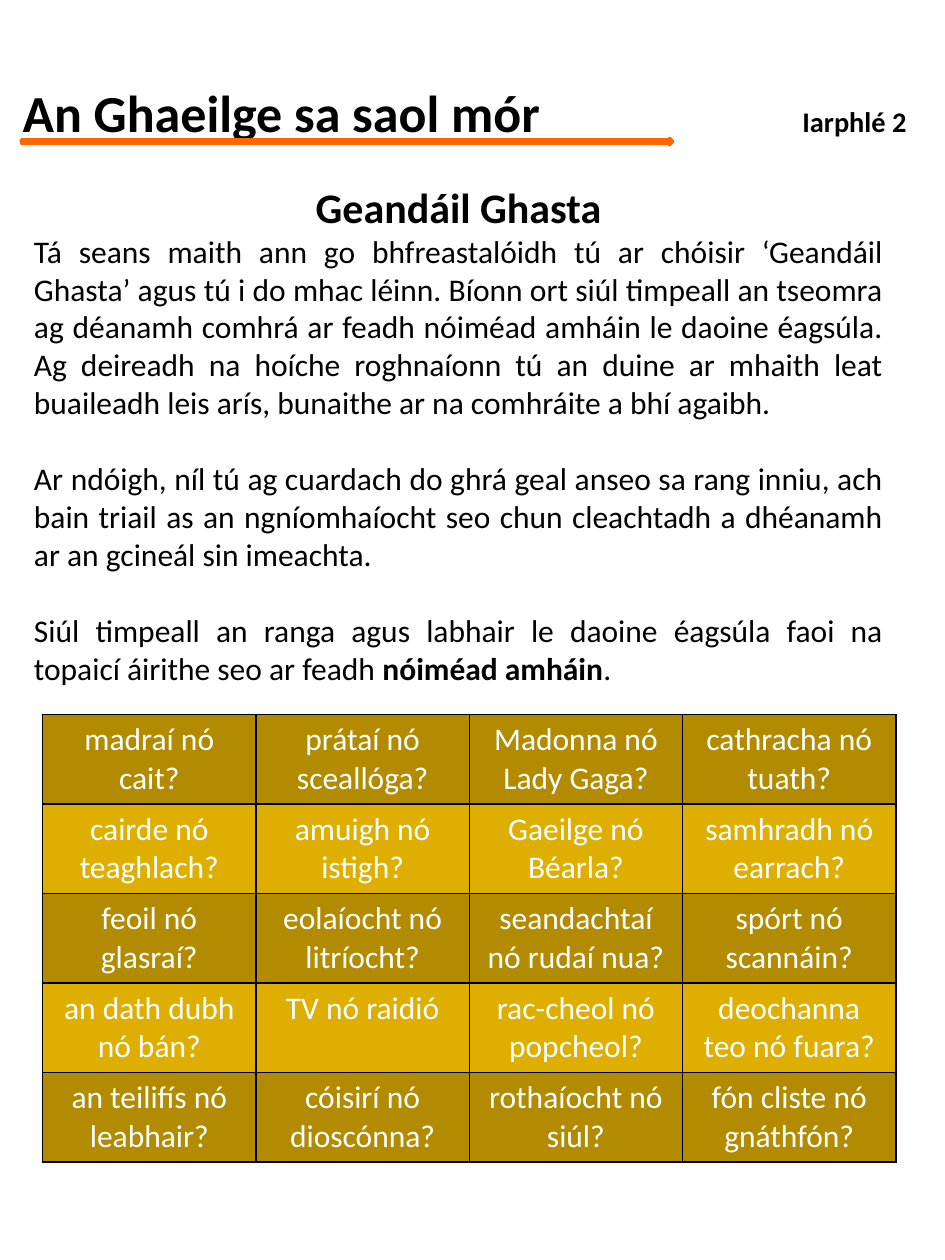
from lxml import etree
from pptx import Presentation
from pptx.dml.color import RGBColor
from pptx.enum.shapes import MSO_SHAPE
from pptx.enum.text import MSO_ANCHOR, MSO_AUTO_SIZE, PP_ALIGN
from pptx.oxml.ns import qn
from pptx.util import Cm, Pt

LEFT, CENTER, JUSTIFY = PP_ALIGN.LEFT, PP_ALIGN.CENTER, PP_ALIGN.JUSTIFY
TOP, MIDDLE = MSO_ANCHOR.TOP, MSO_ANCHOR.MIDDLE
NO_FIT = MSO_AUTO_SIZE.NONE
RIGHT_ARROW = MSO_SHAPE.RIGHT_ARROW

BLACK, WHITE, ORANGE = "000000", "FFFFFF", "FF6600"
ROW_FILLS = ("B28B00", "DEAE00")

# Boxes in centimetres: left, top, width, height
TITLE_BOX = (0.2, 1.07, 18.42, 2.36)
RULE_BOX = (0.43, 2.79, 13.13, 0.13)
BODY_BOX = (0.43, 3.53, 17.63, 10.52)
TABLE_BOX = (0.86, 14.4, 17.2, 8.89)

INSTRUCTIONS = [
    [("Tá seans maith ann go bhfreastalóidh tú ar chóisir ‘Geandáil Ghasta’ "
      "agus tú i do mhac léinn. Bíonn ort siúl timpeall an tseomra ag déanamh "
      "comhrá ar feadh nóiméad amháin le daoine éagsúla. Ag deireadh na hoíche "
      "roghnaíonn tú an duine ar mhaith leat buaileadh leis arís, bunaithe ar "
      "na comhráite a bhí agaibh.", False)],
    [("Ar ndóigh, níl tú ag cuardach do ghrá geal anseo sa rang inniu, ach bain "
      "triail as an ngníomhaíocht seo chun cleachtadh a dhéanamh ar an gcineál "
      "sin imeachta.", False)],
    [("Siúl timpeall an ranga agus labhair le daoine éagsúla faoi na topaicí "
      "áirithe seo ar feadh ", False), ("nóiméad amháin", True), (".", False)],
]

TOPICS = [
    ["madraí nó cait?", "prátaí nó sceallóga?", "Madonna nó Lady Gaga?",
     "cathracha nó tuath?"],
    ["cairde nó teaghlach?", "amuigh nó istigh?", "Gaeilge nó Béarla?",
     "samhradh nó earrach?"],
    ["feoil nó glasraí?", "eolaíocht nó litríocht?",
     "seandachtaí nó rudaí nua?", "spórt nó scannáin?"],
    ["an dath dubh nó bán?", "TV nó raidió", "rac-cheol nó popcheol?",
     "deochanna teo nó fuara?"],
    ["an teilifís nó leabhair?", "cóisirí nó dioscónna?",
     "rothaíocht nó siúl?", "fón cliste nó gnáthfón?"],
]


def color(value):
    return RGBColor.from_string(value)


def set_all(target, formats):
    for name, value in formats.items():
        setattr(target, name, value)


def add_span(para, text, size, bold=False, ink=BLACK):
    span = para.add_run()
    span.text = text
    set_all(span.font, {"name": "Calibri", "size": Pt(size), "bold": bold})
    span.font.color.rgb = color(ink)


def place(shape, box):
    names = ("left", "top", "width", "height")
    set_all(shape, dict(zip(names, map(Cm, box))))


def add_right_tab(para, position):
    tabs = etree.SubElement(para._p.get_or_add_pPr(), qn("a:tabLst"))
    etree.SubElement(tabs, qn("a:tab"), pos=str(Cm(position)), algn="r")


def remove_bullet(para):
    properties = para._p.get_or_add_pPr()
    properties.set("marL", "0")
    properties.set("indent", "0")
    etree.SubElement(properties, qn("a:buNone"))


def fill_title(title, box):
    place(title, box)
    set_all(title.text_frame, {"auto_size": NO_FIT, "vertical_anchor": MIDDLE,
                               "word_wrap": True})
    para = title.text_frame.paragraphs[0]
    para.alignment = LEFT
    add_right_tab(para, box[2] - 0.6)
    add_span(para, "An Ghaeilge sa saol mór\t", 29.7, True)
    add_span(para, "Iarphlé 2", 16.2, True)


def add_rule(page, box):
    rule = page.shapes.add_shape(RIGHT_ARROW, *map(Cm, box))
    rule.shadow.inherit = False
    rule.fill.solid()
    rule.fill.fore_color.rgb = color(ORANGE)
    rule.line.color.rgb = color(ORANGE)
    rule.line.width = Pt(2)


def fill_body(body, box):
    place(body, box)
    frame = body.text_frame
    set_all(frame, {"auto_size": NO_FIT, "vertical_anchor": TOP,
                    "word_wrap": True})
    heading = frame.paragraphs[0]
    set_all(heading, {"alignment": CENTER, "space_before": Pt(0)})
    remove_bullet(heading)
    add_span(heading, "Geandáil Ghasta", 24, True)
    for index, spans in enumerate(INSTRUCTIONS):
        para = frame.add_paragraph()
        gap = Pt(22 if index else 0)
        set_all(para, {"alignment": JUSTIFY, "space_before": gap})
        remove_bullet(para)
        for text, bold in spans:
            add_span(para, text, 18, bold)


def add_borders(cell, ink, width):
    properties = cell._tc.get_or_add_tcPr()
    for position, side in enumerate(("lnL", "lnR", "lnT", "lnB")):
        line = etree.Element(qn("a:" + side), w=str(Pt(width)))
        fill = etree.SubElement(line, qn("a:solidFill"))
        etree.SubElement(fill, qn("a:srgbClr"), val=ink)
        properties.insert(position, line)


def add_topics(page, box):
    rows, columns = len(TOPICS), len(TOPICS[0])
    table = page.shapes.add_table(rows, columns, *map(Cm, box)).table
    set_all(table, {"first_row": False, "horz_banding": False})
    for row, topics in enumerate(TOPICS):
        for column, topic in enumerate(topics):
            cell = table.cell(row, column)
            cell.fill.solid()
            cell.fill.fore_color.rgb = color(ROW_FILLS[row % 2])
            add_borders(cell, BLACK, 1)
            para = cell.text_frame.paragraphs[0]
            para.alignment = CENTER
            add_span(para, topic, 18, ink=WHITE)


def main():
    deck = Presentation()
    set_all(deck, {"slide_width": Cm(19.05), "slide_height": Cm(25.4)})
    page = deck.slides.add_slide(deck.slide_layouts[1])
    fill_title(page.shapes.title, TITLE_BOX)
    fill_body(page.placeholders[1], BODY_BOX)
    add_rule(page, RULE_BOX)
    add_topics(page, TABLE_BOX)
    deck.save("out.pptx")


if __name__ == "__main__":
    main()
